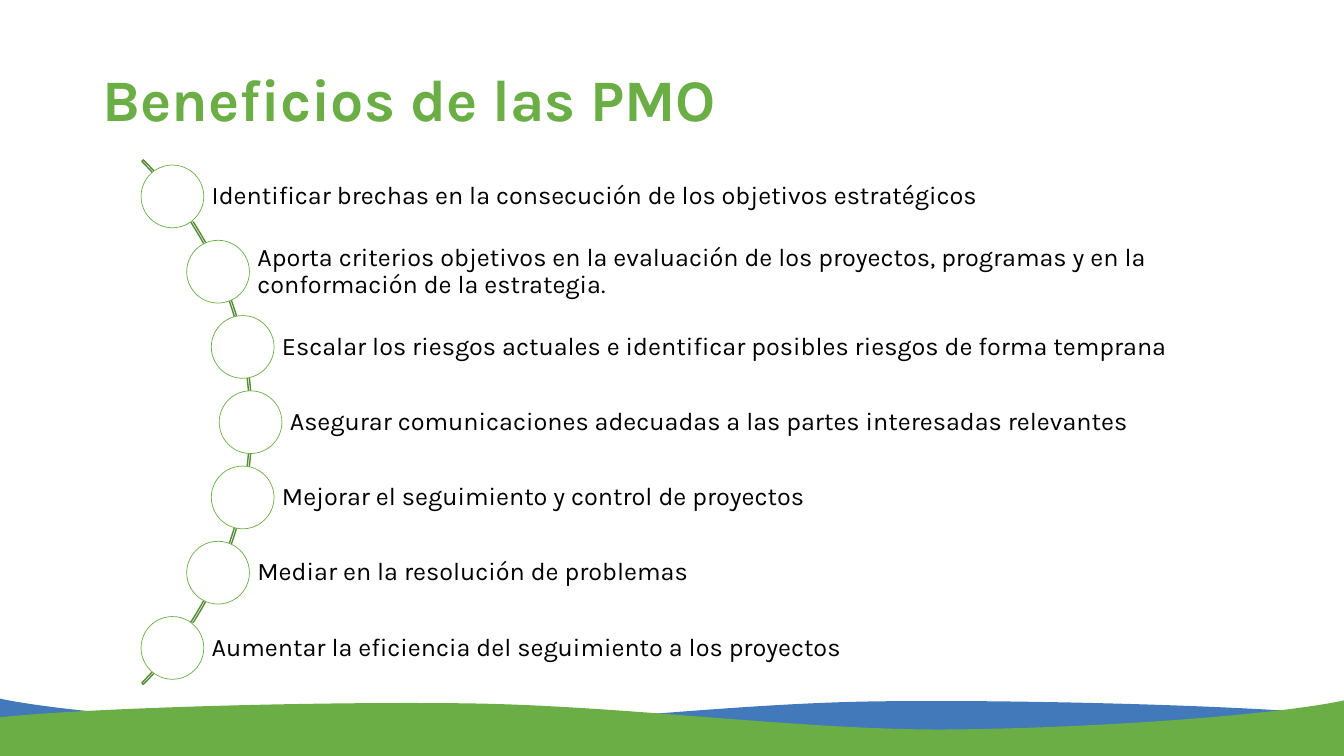
from dataclasses import dataclass
from math import sqrt

from lxml.etree import SubElement
from pptx import Presentation
from pptx.dml.color import RGBColor
from pptx.enum.shapes import MSO_SHAPE
from pptx.enum.text import MSO_ANCHOR, PP_ALIGN
from pptx.oxml.ns import qn
from pptx.util import Inches, Pt


@dataclass(frozen=True)
class Theme:
    font: str = "Karla"
    green: RGBColor = RGBColor(0x6B, 0xAE, 0x45)
    dark_green: RGBColor = RGBColor(0x56, 0x8B, 0x37)
    blue: RGBColor = RGBColor(0x42, 0x79, 0xBB)
    white: RGBColor = RGBColor(0xFF, 0xFF, 0xFF)
    black: RGBColor = RGBColor(0x00, 0x00, 0x00)
    title_size: Pt = Pt(42)
    body_size: Pt = Pt(18)


THEME = Theme()
WIDTH, HEIGHT = Inches(13.33), Inches(7.5)
BOTTOM = 100 * HEIGHT / WIDTH

ARC_X, ARC_Y, ARC_RADIUS = -8.85, 31.42, 27.6
NODE_X, NODE_RADIUS, NODE_SIZE = -8.55, 27.19, 4.67
ROW_STEP, BAR_HEIGHT, BAR_RIGHT = 5.6, 3.73, 95.65

WAVE_START = (100, 53.25)
WAVE_CURVES = [
    [(94.2, 52.58), (76.95, 52.05), (65.25, 52.2)],
    [(53.63, 52.35), (40.73, 54.15), (29.85, 54.15)],
    [(18.98, 54.08), (5.1, 53.1), (-0.08, 51.98)],
]

BENEFITS = [
    "Identificar brechas en la consecución de los objetivos estratégicos",
    "Aporta criterios objetivos en la evaluación de los proyectos, programas y en la "
    "conformación de la estrategia.",
    "Escalar los riesgos actuales e identificar posibles riesgos de forma temprana",
    "Asegurar comunicaciones adecuadas a las partes interesadas relevantes",
    "Mejorar el seguimiento y control de proyectos",
    "Mediar en la resolución de problemas",
    "Aumentar la eficiencia del seguimiento a los proyectos",
]


def share(percent):
    return round(WIDTH * percent / 100)


def box(*percents):
    return [share(percent) for percent in percents]


def bend(sp, count):
    lines = list(sp.element.iter(qn("a:lnTo")))[:3 * count]
    for i in range(0, len(lines), 3):
        group = lines[i:i + 3]
        outline = group[0].getparent()
        curve = SubElement(outline, qn("a:cubicBezTo"))
        outline.replace(group[0], curve)
        for line in group:
            curve.append(line[0])
        for line in group[1:]:
            outline.remove(line)


def add_wave(s, color, mirrored=False, drop=0):
    crest = [WAVE_START] + [point for curve in WAVE_CURVES for point in curve]
    outline = [(x, y + drop) for x, y in crest] + [(-0.08, BOTTOM), (100, BOTTOM)]
    if mirrored:
        outline = [(99.92 - x, y) for x, y in outline]
    points = [box(*point) for point in outline]
    builder = s.shapes.build_freeform(*points[0])
    builder.add_line_segments(points[1:])
    sp = builder.convert_to_shape()
    bend(sp, len(WAVE_CURVES))
    sp.shadow.inherit = False
    sp.fill.solid()
    sp.fill.fore_color.rgb = color
    sp.line.fill.background()


def add_shape(s, kind, bounds, line=None, weight=0):
    sp = s.shapes.add_shape(kind, *box(*bounds))
    sp.shadow.inherit = False
    sp.fill.solid()
    sp.fill.fore_color.rgb = THEME.white
    if line is None:
        sp.line.fill.background()
    else:
        sp.line.color.rgb = line
        sp.line.width = Pt(weight)
    return sp


def write(sp, text, size, color, bold=False):
    tf = sp.text_frame
    tf.word_wrap = True
    tf.vertical_anchor = MSO_ANCHOR.MIDDLE
    p = tf.paragraphs[0]
    p.text = text
    p.alignment = PP_ALIGN.LEFT
    p.line_spacing = 0.9
    p.font.name = THEME.font
    p.font.size = size
    p.font.bold = bold
    p.font.color.rgb = color
    return tf


def add_title(s, text):
    sp = s.shapes.add_textbox(*box(6.9, 2.18, 86.25, 10.88))
    write(sp, text, THEME.title_size, THEME.green, bold=True)


def add_arc(s):
    diameter = 2 * ARC_RADIUS
    bounds = (ARC_X - ARC_RADIUS, ARC_Y - ARC_RADIUS, diameter, diameter)
    sp = add_shape(s, MSO_SHAPE.BLOCK_ARC, bounds, THEME.dark_green, 1)
    sp.fill.background()
    for i, value in enumerate((189, 27, 0.003)):
        sp.adjustments[i] = value


def add_benefit(s, text, offset):
    x = NODE_X + sqrt(NODE_RADIUS ** 2 - offset ** 2)
    y = ARC_Y + offset
    bar = add_shape(s, MSO_SHAPE.RECTANGLE, (x, y - BAR_HEIGHT / 2, BAR_RIGHT - x, BAR_HEIGHT))
    tf = write(bar, text, THEME.body_size, THEME.black)
    tf.margin_left = Inches(0.39)
    tf.margin_top = tf.margin_right = tf.margin_bottom = Inches(0.05)
    node = (x - NODE_SIZE / 2, y - NODE_SIZE / 2, NODE_SIZE, NODE_SIZE)
    add_shape(s, MSO_SHAPE.OVAL, node, THEME.green, 0.5)


def main():
    prs = Presentation()
    prs.slide_width, prs.slide_height = WIDTH, HEIGHT
    s = prs.slides.add_slide(prs.slide_layouts[6])
    add_wave(s, THEME.blue)
    add_wave(s, THEME.green, mirrored=True, drop=0.15)
    add_title(s, "Beneficios de las PMO")
    add_arc(s)
    middle = (len(BENEFITS) - 1) / 2
    for i, text in enumerate(BENEFITS):
        add_benefit(s, text, (i - middle) * ROW_STEP)
    prs.save("out.pptx")


if __name__ == "__main__":
    main()
